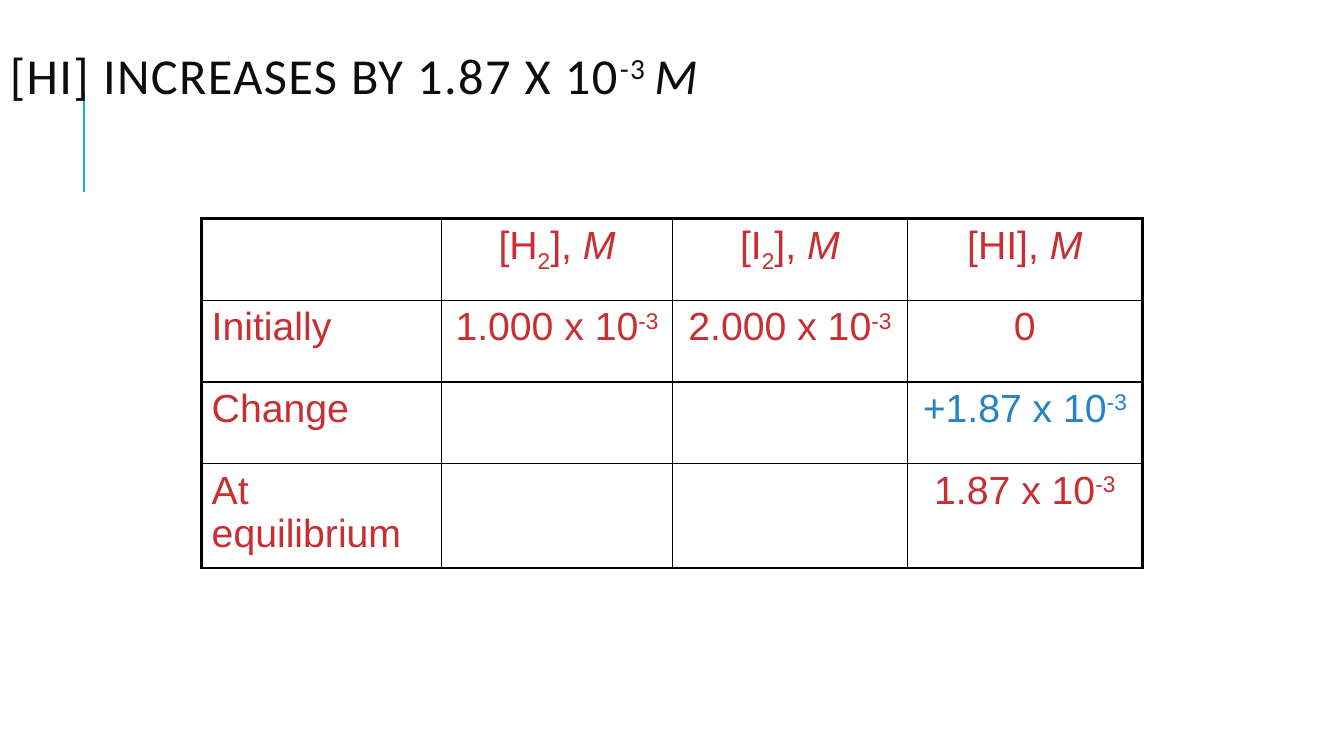
from lxml.etree import SubElement
from pptx import Presentation
from pptx.dml.color import RGBColor
from pptx.enum.shapes import MSO_CONNECTOR
from pptx.enum.text import MSO_ANCHOR, PP_ALIGN
from pptx.oxml.ns import qn
from pptx.util import Inches, Pt

WIDTH, HEIGHT = 13.33, 7.5
RED, BLUE, BLACK = "C82E32", "2683C6", "000000"
TITLE_FORMAT = {"name": "Calibri", "size": Pt(36)}
CELL_FORMAT = {"name": "Arial", "size": Pt(28)}
BASELINES = {"sub": "-25000", "sup": "30000"}
MOLAR = ("M", "italic")
POWER = ("-3", "sup")
TITLE = [("[HI] INCREASES BY 1.87 X 10", ""), ("-3 ", "sup"), MOLAR]
COLUMNS = [2.38, 2.29, 2.33, 2.33]
ROW_HEIGHT = 0.81
ROWS = [
    [[],
     [("[H", ""), ("2", "sub"), ("], ", ""), MOLAR],
     [("[I", ""), ("2", "sub"), ("], ", ""), MOLAR],
     [("[HI], ", ""), MOLAR]],
    [[("Initially", "")],
     [("1.000 x 10", ""), POWER],
     [("2.000 x 10", ""), POWER],
     [("0", "")]],
    [[("Change", "")], [], [], [("+1.87 x 10", ""), POWER]],
    [[("At equilibrium", "")], [], [], [("1.87 x 10", ""), POWER]],
]
CHANGE_CELL = (2, 3)


def color(value):
    return RGBColor.from_string(value)


def write_runs(paragraph, pieces, formats, text_color, spacing=None):
    for text, style in pieces:
        run = paragraph.add_run()
        run.text = text
        for name, value in formats.items():
            setattr(run.font, name, value)
        run.font.color.rgb = color(text_color)
        properties = run._r.get_or_add_rPr()
        if style == "italic":
            run.font.italic = True
        elif style:
            properties.set("baseline", BASELINES[style])
        if spacing:
            properties.set("spc", spacing)


def add_accent_line(slide, left, top, height):
    line = slide.shapes.add_connector(
        MSO_CONNECTOR.STRAIGHT, Inches(left), Inches(top + height), Inches(left), Inches(top))
    line.line.color.rgb = color("1CADE4")
    line.line.width = Pt(1.5)
    SubElement(line._element.spPr, qn("a:effectLst"))


def add_title(slide, left, top, width, height):
    shape = slide.shapes.add_textbox(Inches(left), Inches(top), Inches(width), Inches(height))
    frame = shape.text_frame
    frame.word_wrap = True
    frame.vertical_anchor = MSO_ANCHOR.MIDDLE
    paragraph = frame.paragraphs[0]
    paragraph.line_spacing = 0.8
    write_runs(paragraph, TITLE, TITLE_FORMAT, "0D0D0D", "100")


def set_borders(cell, outer_edges):
    properties = cell._tc.get_or_add_tcPr()
    for position, (edge, outer) in enumerate(outer_edges.items()):
        border = properties.makeelement(qn(f"a:{edge}"), {"w": str(Pt(2.25 if outer else 1))})
        fill = SubElement(border, qn("a:solidFill"))
        SubElement(fill, qn("a:srgbClr"), val=BLACK)
        properties.insert(position, border)


def add_concentration_table(slide, left, top):
    last_row, last_column = len(ROWS) - 1, len(COLUMNS) - 1
    table = slide.shapes.add_table(
        len(ROWS), len(COLUMNS), Inches(left), Inches(top),
        Inches(sum(COLUMNS)), Inches(ROW_HEIGHT * len(ROWS))).table
    table.first_row = table.horz_banding = False
    for column, width in zip(table.columns, COLUMNS):
        column.width = Inches(width)
    for row_index, row in enumerate(ROWS):
        table.rows[row_index].height = Inches(ROW_HEIGHT)
        for column_index, pieces in enumerate(row):
            cell = table.cell(row_index, column_index)
            cell.fill.background()
            set_borders(cell, {
                "lnL": column_index == 0, "lnR": column_index == last_column,
                "lnT": row_index == 0, "lnB": row_index == last_row})
            paragraph = cell.text_frame.paragraphs[0]
            paragraph.alignment = PP_ALIGN.CENTER if column_index else PP_ALIGN.LEFT
            text_color = BLUE if (row_index, column_index) == CHANGE_CELL else RED
            write_runs(paragraph, pieces, CELL_FORMAT, text_color)


def main():
    presentation = Presentation()
    presentation.slide_width, presentation.slide_height = Inches(WIDTH), Inches(HEIGHT)
    slide = presentation.slides.add_slide(presentation.slide_layouts[6])
    add_accent_line(slide, 0.83, 0.9, 1)
    add_title(slide, 0, 0.17, WIDTH, 1.25)
    add_concentration_table(slide, 2, 2.17)
    presentation.save("out.pptx")


if __name__ == "__main__":
    main()
